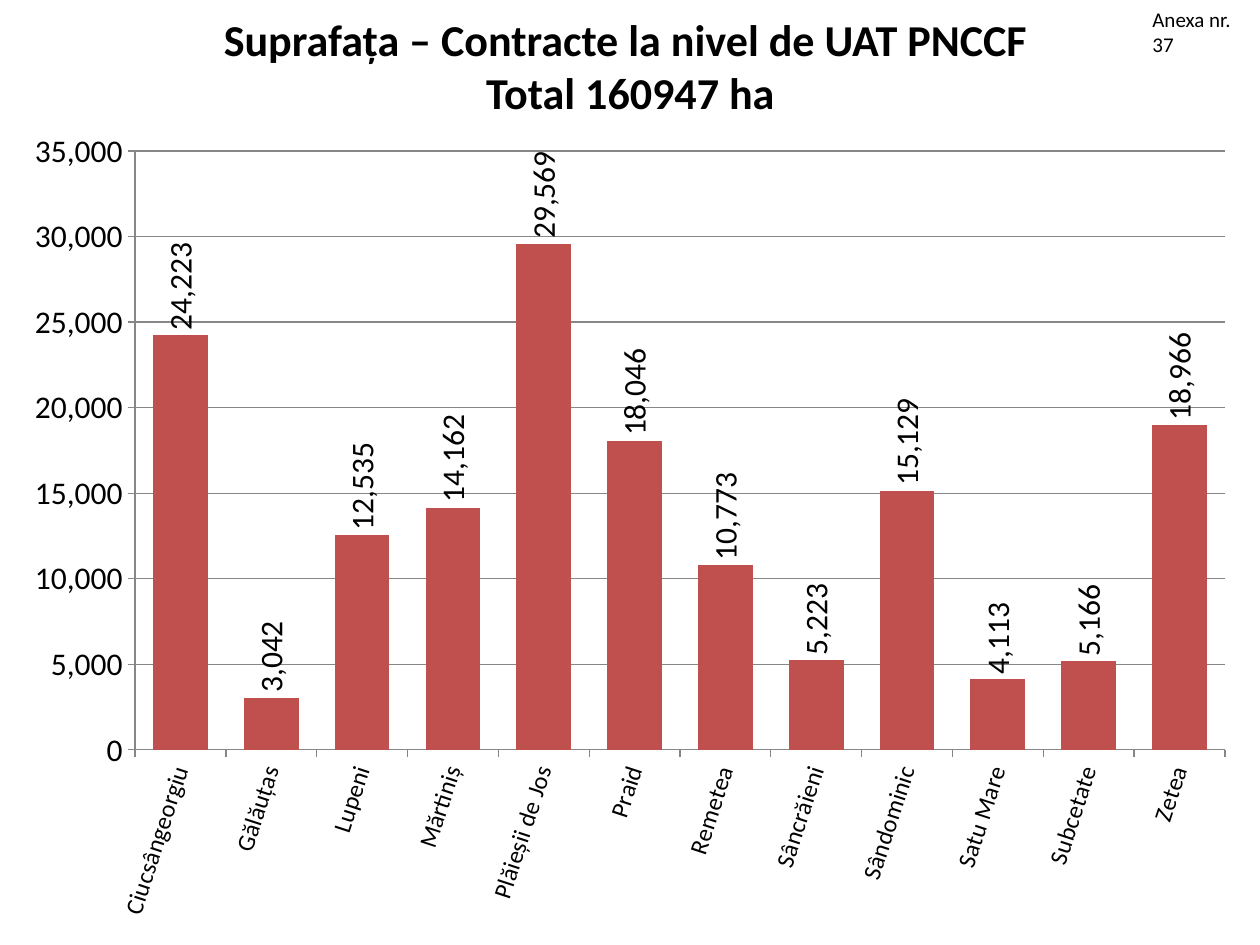
from lxml import etree
from pptx import Presentation
from pptx.chart.data import CategoryChartData
from pptx.dml.color import RGBColor
from pptx.enum.chart import XL_CHART_TYPE as ChartType, XL_LABEL_POSITION as LabelPosition
from pptx.enum.chart import XL_TICK_MARK as TickMark
from pptx.enum.lang import MSO_LANGUAGE_ID as Language
from pptx.enum.text import MSO_ANCHOR as Anchor, MSO_AUTO_SIZE as AutoSize, PP_ALIGN as Align
from pptx.oxml.ns import qn
from pptx.util import Pt

EMU_PER_PX = 914400 / 126
FONT = "Calibri"
COLORS = {"text": "000000", "bar": "C0504D", "line": "878787", "background": "FFFFFF"}
AREAS = {
    "Ciucsângeorgiu": 24223, "Gălăuțas": 3042, "Lupeni": 12535, "Mărtiniș": 14162,
    "Plăieșii de Jos": 29569, "Praid": 18046, "Remetea": 10773, "Sâncrăieni": 5223,
    "Sândominic": 15129, "Satu Mare": 4113, "Subcetate": 5166, "Zetea": 18966,
}


def px(length):
    return round(length * EMU_PER_PX)


def color(name):
    return RGBColor.from_string(COLORS[name])


def style_font(font, size, bold=False):
    font.name = FONT
    font.size = Pt(size)
    font.bold = bold
    font.language_id = Language.ROMANIAN
    font.color.rgb = color("text")


def add_run(paragraph, text, size, bold=False):
    run = paragraph.add_run()
    run.text = text
    style_font(run.font, size, bold)


def fill_title(slide, left, top, width, height):
    title = slide.shapes.title
    title.left, title.top, title.width, title.height = map(px, (left, top, width, height))
    frame = title.text_frame
    frame.auto_size = AutoSize.NONE
    frame.vertical_anchor = Anchor.MIDDLE
    paragraph = frame.paragraphs[0]
    paragraph.alignment = Align.CENTER
    add_run(paragraph, "Suprafața – Contracte la nivel de UAT PNCCF ", 25.2, bold=True)
    paragraph.add_line_break()
    add_run(paragraph, "Total 160947 ha", 25.2, bold=True)


def rotate_text(element, degrees):
    element.find(qn("c:txPr")).find(qn("a:bodyPr")).set("rot", str(degrees * 60000))


def place_plot(chart, chart_size, left, top, width, height):
    """Fix the inner plot area, given in px from the corner of the chart."""
    plot_area = chart.plots[0]._element.getparent()
    layout = plot_area.find(qn("c:layout"))
    if layout is None:
        layout = etree.Element(qn("c:layout"))
        plot_area.insert(0, layout)
    manual = etree.SubElement(layout, qn("c:manualLayout"))
    chart_width, chart_height = chart_size
    settings = {"layoutTarget": "inner", "xMode": "edge", "yMode": "edge",
                "x": left / chart_width, "y": top / chart_height,
                "w": width / chart_width, "h": height / chart_height}
    for tag, value in settings.items():
        etree.SubElement(manual, qn(f"c:{tag}")).set("val", str(value))


def style_axis(axis, size):
    axis.major_tick_mark = TickMark.OUTSIDE
    axis.minor_tick_mark = TickMark.NONE
    axis.format.line.color.rgb = color("line")
    axis.format.line.width = Pt(0.75)
    style_font(axis.tick_labels.font, size)


def add_area_chart(slide, left, top, width, height):
    data = CategoryChartData(number_format="#,##0")
    data.categories = AREAS.keys()
    data.add_series("Series 1", AREAS.values())
    chart = slide.shapes.add_chart(
        ChartType.COLUMN_CLUSTERED, *map(px, (left, top, width, height)), data).chart
    chart.has_legend = False
    chart.has_title = False
    style_font(chart.font, 18)
    place_plot(chart, (width, height), 125, 35, 1090, 599)

    style_axis(chart.category_axis, 14)
    rotate_text(chart.category_axis._element, -72)
    values = chart.value_axis
    style_axis(values, 18)
    values.minimum_scale, values.maximum_scale, values.major_unit = 0, 35000, 5000
    values.tick_labels.number_format = "#,##0"
    values.tick_labels.number_format_is_linked = False
    values.major_gridlines.format.line.color.rgb = color("line")
    values.major_gridlines.format.line.width = Pt(0.75)

    plot = chart.plots[0]
    plot.gap_width = 66
    plot.vary_by_categories = False
    series = plot.series[0]
    series.format.fill.solid()
    series.format.fill.fore_color.rgb = color("bar")
    labels = series.data_labels
    labels.show_value = True
    labels.number_format = "#,##0"
    labels.number_format_is_linked = False
    labels.position = LabelPosition.OUTSIDE_END
    style_font(labels.font, 18)
    rotate_text(labels._element, -90)


def add_annex_note(slide, left, top, width, height):
    frame = slide.shapes.add_textbox(*map(px, (left, top, width, height))).text_frame
    frame.word_wrap = True
    frame.auto_size = AutoSize.SHAPE_TO_FIT_TEXT
    add_run(frame.paragraphs[0], "Anexa nr. 37", 12)


def main():
    presentation = Presentation()
    presentation.slide_width, presentation.slide_height = px(1260), px(945)
    slide = presentation.slides.add_slide(presentation.slide_layouts[5])
    slide.background.fill.solid()
    slide.background.fill.fore_color.rgb = color("background")
    fill_title(slide, 16, 21, 1229, 88)
    add_area_chart(slide, 10, 116, 1239, 819)
    add_annex_note(slide, 1140, 0, 120, 38)
    presentation.save("out.pptx")


if __name__ == "__main__":
    main()
